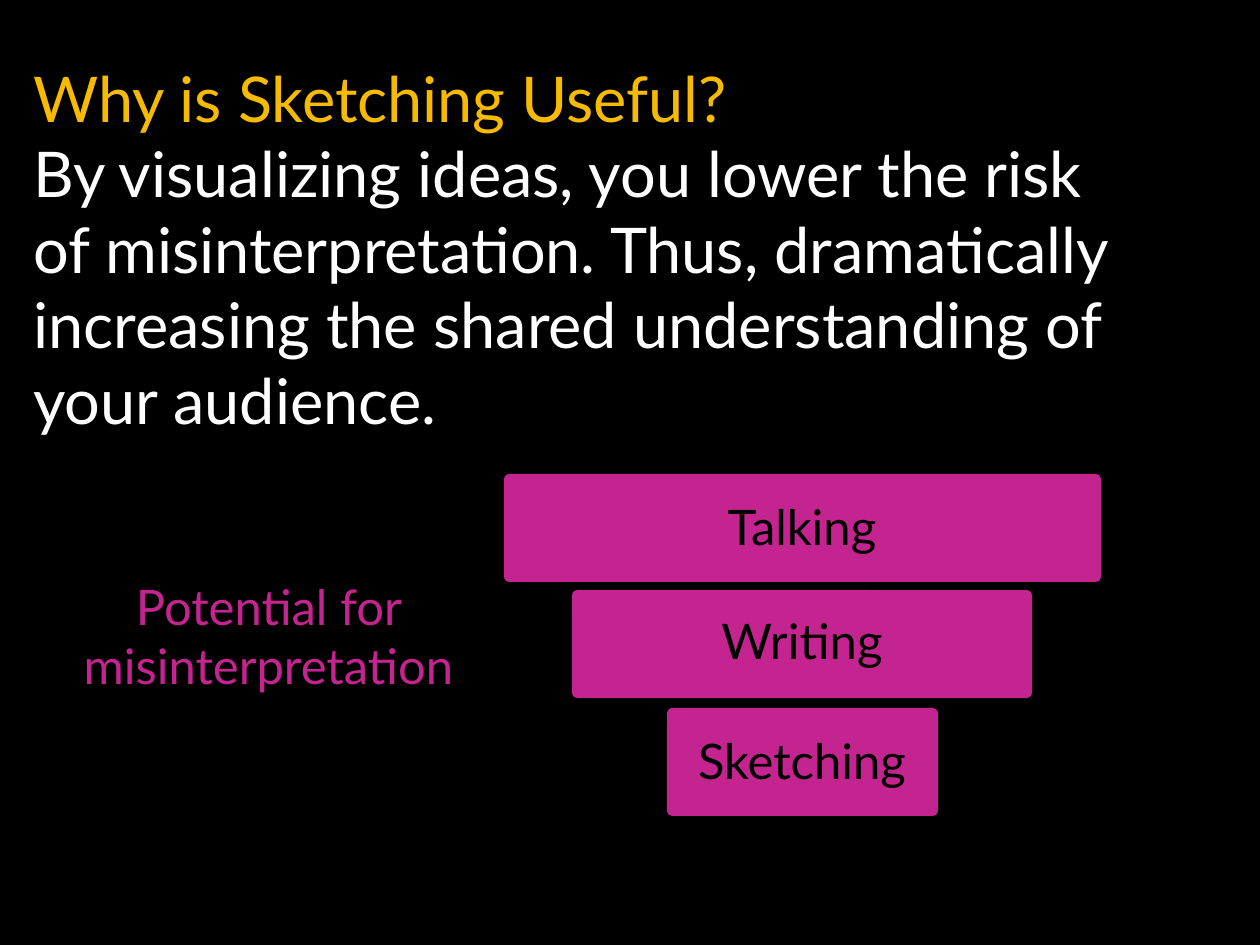
"""Build the slide on why sketching is useful."""
from dataclasses import dataclass

from pptx import Presentation
from pptx.dml.color import RGBColor
from pptx.enum.shapes import MSO_SHAPE
from pptx.enum.text import MSO_ANCHOR, PP_ALIGN
from pptx.shapes.autoshape import Shape
from pptx.slide import Slide
from pptx.util import Emu, Pt


@dataclass(frozen=True)
class Theme:
    font: str = "Lato"
    back: str = "000000"
    title: str = "F6BB00"
    body: str = "FFFFFF"
    bar: str = "C4248F"
    ink: str = "000000"
    large: int = 36
    small: int = 28


@dataclass(frozen=True)
class Box:
    left: int
    top: int
    width: int
    height: int


@dataclass(frozen=True)
class Bar:
    name: str
    top: int
    width: int
    label: int


THEME = Theme()
SCALE = 914400 / 126
CENTER = 802
BAR_H = 108
LABEL_W, LABEL_H = 228, 59
BARS = [
    Bar("Sketching", 708, 271, 730),
    Bar("Writing", 590, 460, 610),
    Bar("Talking", 474, 597, 496),
]


def px(count: int) -> Emu:
    return Emu(round(count * SCALE))


def place(box: Box) -> tuple[Emu, ...]:
    return px(box.left), px(box.top), px(box.width), px(box.height)


def paint(shape: Shape, color: str) -> None:
    shape.fill.solid()
    shape.fill.fore_color.rgb = RGBColor.from_string(color)


def write(slide: Slide, box: Box, *lines: tuple[str, str], size: int,
          center: bool = False, fill: str | None = None) -> None:
    shape = slide.shapes.add_textbox(*place(box))
    if fill:
        paint(shape, fill)
    frame = shape.text_frame
    frame.word_wrap = True
    if center:
        frame.vertical_anchor = MSO_ANCHOR.MIDDLE
        frame.margin_left = frame.margin_right = 0
        frame.margin_top = frame.margin_bottom = 0
    for index, (text, color) in enumerate(lines):
        para = frame.add_paragraph() if index else frame.paragraphs[0]
        para.alignment = PP_ALIGN.CENTER if center else PP_ALIGN.LEFT
        run = para.add_run()
        run.text = text
        run.font.name = THEME.font
        run.font.size = Pt(size)
        run.font.color.rgb = RGBColor.from_string(color)


def draw_bar(slide: Slide, bar: Bar) -> None:
    box = Box(CENTER - bar.width // 2, bar.top, bar.width, BAR_H)
    shape = slide.shapes.add_shape(MSO_SHAPE.ROUNDED_RECTANGLE, *place(box))
    shape.adjustments[0] = 0.05
    shape.shadow.inherit = False
    shape.line.fill.background()
    paint(shape, THEME.bar)


def draw_label(slide: Slide, bar: Bar) -> None:
    box = Box(CENTER - LABEL_W // 2, bar.label, LABEL_W, LABEL_H)
    write(slide, box, (bar.name, THEME.ink), size=THEME.small,
          center=True, fill=THEME.bar)


def main() -> None:
    deck = Presentation()
    deck.slide_width, deck.slide_height = px(1260), px(945)
    slide = deck.slides.add_slide(deck.slide_layouts[6])
    paint(slide.background, THEME.back)
    for bar in BARS:
        draw_bar(slide, bar)
    write(slide, Box(21, 53, 1131, 140),
          ("Why is Sketching Useful?", THEME.title),
          ("By visualizing ideas, you lower the risk of misinterpretation. "
           "Thus, dramatically increasing the shared understanding of "
           "your audience.", THEME.body), size=THEME.large)
    for bar in BARS:
        draw_label(slide, bar)
    write(slide, Box(47, 576, 443, 119),
          ("Potential for misinterpretation", THEME.bar),
          size=THEME.small, center=True)
    deck.save("out.pptx")


if __name__ == "__main__":
    main()
